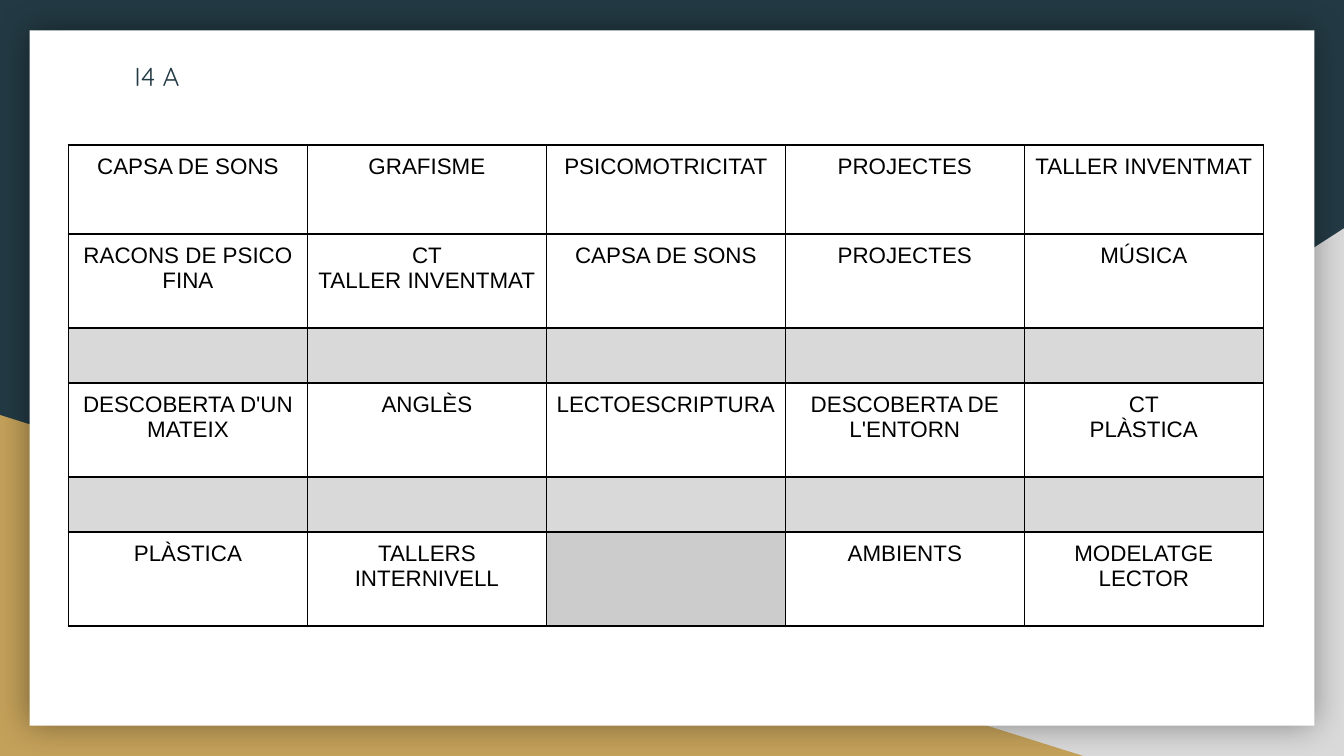
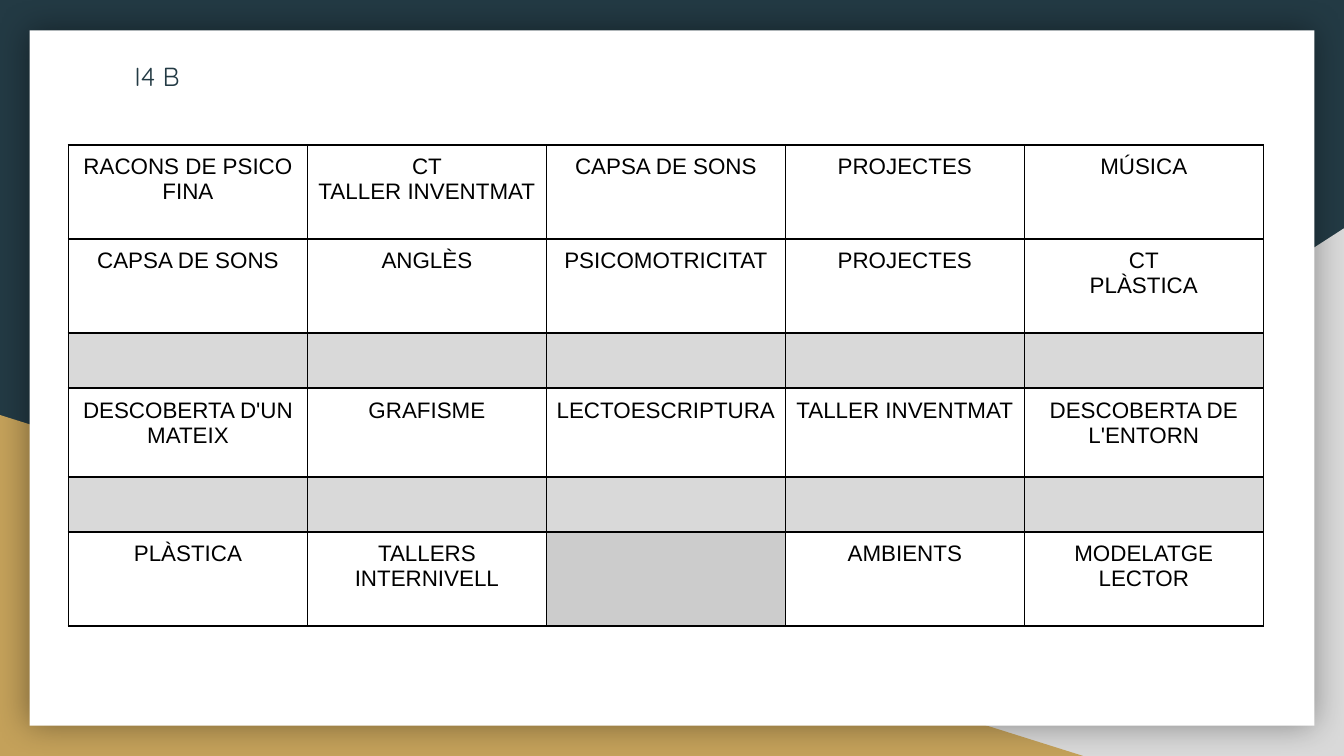
import pptx
import pptx.util
import pptx.dml.color
import pptx.enum.shapes
import pptx.enum.text
import pptx.oxml
import pptx.oxml.ns
from dataclasses import dataclass
from lxml import etree

SHAPE = pptx.enum.shapes.MSO_SHAPE
ALIGN = pptx.enum.text.PP_ALIGN


@dataclass(frozen=True)
class Theme:
    navy: str = "233A44"
    gold: str = "C4A15A"
    grey: str = "D9D9D9"
    blocked: str = "CCCCCC"
    paper: str = "FFFFFF"
    ink: str = "000000"
    title_font: str = "Quicksand"
    body_font: str = "Arial"
    title_size: int = 14
    body_size: int = 12
    border: int = 1
    title_inset: float = 0.1
    cell_inset: float = 0.07


THEME = Theme()
WIDTH = pptx.util.Inches(10)
HEIGHT = pptx.util.Inches(5.625)
COLUMNS = 5
COLUMN = 17.78
TALL, NORMAL, BREAK = 12.44, 11.73, 7.29

BREAK_ROW = [None] * COLUMNS
LAST_ROW = ["PLÀSTICA", "TALLERS INTERNIVELL", None, "AMBIENTS", "MODELATGE LECTOR"]

TIMETABLES = [
    ("I4 A", 18.5, [NORMAL, TALL, BREAK, TALL, BREAK, TALL], [
        ["CAPSA DE SONS", "GRAFISME", "PSICOMOTRICITAT", "PROJECTES", "TALLER INVENTMAT"],
        ["RACONS DE PSICO FINA", "CT\nTALLER INVENTMAT", "CAPSA DE SONS", "PROJECTES", "MÚSICA"],
        BREAK_ROW,
        ["DESCOBERTA D'UN MATEIX", "ANGLÈS", "LECTOESCRIPTURA", "DESCOBERTA DE L'ENTORN", "CT\nPLÀSTICA"],
        BREAK_ROW,
        LAST_ROW,
    ]),
    ("I4 B", 20.6, [TALL, TALL, BREAK, NORMAL, BREAK, TALL], [
        ["RACONS DE PSICO FINA", "CT\nTALLER INVENTMAT", "CAPSA DE SONS", "PROJECTES", "MÚSICA"],
        ["CAPSA DE SONS", "ANGLÈS", "PSICOMOTRICITAT", "PROJECTES", "CT\nPLÀSTICA"],
        BREAK_ROW,
        ["DESCOBERTA D'UN MATEIX", "GRAFISME", "LECTOESCRIPTURA", "TALLER INVENTMAT", "DESCOBERTA DE L'ENTORN"],
        BREAK_ROW,
        LAST_ROW,
    ]),
]


def across(share):
    return round(WIDTH * share / 100)


def down(share):
    return round(HEIGHT * share / 100)


def box(left, top, width, height):
    return across(left), down(top), across(width), down(height)


def rgb(value):
    return pptx.dml.color.RGBColor.from_string(value)


def set_insets(target, inset):
    target.margin_left = target.margin_right = pptx.util.Inches(inset)
    target.margin_top = target.margin_bottom = pptx.util.Inches(inset)


def set_font(p, name, size, color):
    p.font.name = name
    p.font.size = pptx.util.Pt(size)
    p.font.color.rgb = rgb(color)


def add_block(s, kind, place, color):
    sp = s.shapes.add_shape(kind, *box(*place))
    sp.fill.solid()
    sp.fill.fore_color.rgb = rgb(color)
    sp.line.fill.background()
    sp.shadow.inherit = False
    return sp


def add_glow(sp, blur, alpha):
    effects = sp.element.spPr.find(pptx.oxml.ns.qn("a:effectLst"))
    effects.append(pptx.oxml.parse_xml(
        f'<a:outerShdw {pptx.oxml.ns.nsdecls("a")} blurRad="{pptx.util.Pt(blur)}" dist="0" dir="0" '
        f'algn="ctr" rotWithShape="0"><a:srgbClr val="{THEME.ink}">'
        f'<a:alpha val="{alpha * 1000}"/></a:srgbClr></a:outerShdw>'))


def dress_layout(layout, s):
    layout.background.fill.solid()
    layout.background.fill.fore_color.rgb = rgb(THEME.navy)
    right = add_block(s, SHAPE.RIGHT_TRIANGLE, (39.2, 30.2, 60.8, 69.8), THEME.grey)
    right.element.spPr.find(pptx.oxml.ns.qn("a:xfrm")).set("flipH", "1")
    left = add_block(s, SHAPE.RIGHT_TRIANGLE, (0, 54.9, 80.6, 45.1), THEME.gold)
    panel = add_block(s, SHAPE.RECTANGLE, (2.2, 4, 95.6, 92), THEME.paper)
    add_glow(panel, 18, 40)
    for index, sp in enumerate((right, left, panel), start=2):
        layout.shapes.element.insert(index, sp.element)


def set_title(s, text, width):
    title = s.shapes.title
    title.left, title.top, title.width, title.height = box(9, 6.2, width, 7.8)
    tf = title.text_frame
    tf.text = text
    tf.word_wrap = True
    tf.auto_size = pptx.enum.text.MSO_AUTO_SIZE.SHAPE_TO_FIT_TEXT
    tf.vertical_anchor = pptx.enum.text.MSO_ANCHOR.TOP
    set_insets(tf, THEME.title_inset)
    p = tf.paragraphs[0]
    p.alignment = ALIGN.LEFT
    set_font(p, THEME.title_font, THEME.title_size, THEME.navy)


def set_borders(cell):
    tc_pr = cell._tc.get_or_add_tcPr()
    for index, side in enumerate(("lnL", "lnR", "lnT", "lnB")):
        ln = etree.Element(pptx.oxml.ns.qn(f"a:{side}"), w=str(pptx.util.Pt(THEME.border)))
        fill = etree.SubElement(ln, pptx.oxml.ns.qn("a:solidFill"))
        etree.SubElement(fill, pptx.oxml.ns.qn("a:srgbClr"), val=THEME.ink)
        tc_pr.insert(index, ln)


def fill_cell(cell, text, empty_color):
    set_insets(cell, THEME.cell_inset)
    cell.text = text or ""
    if text:
        cell.fill.background()
    else:
        cell.fill.solid()
        cell.fill.fore_color.rgb = rgb(empty_color)
    for p in cell.text_frame.paragraphs:
        p.alignment = ALIGN.CENTER
        set_font(p, THEME.body_font, THEME.body_size, THEME.ink)
    set_borders(cell)


def add_timetable(s, heights, rows):
    place = box(5.1, 19.2, COLUMN * COLUMNS, sum(heights))
    table = s.shapes.add_table(len(rows), COLUMNS, *place).table
    table.first_row = table.horz_banding = False
    for column in table.columns:
        column.width = across(COLUMN)
    for i, (height, texts) in enumerate(zip(heights, rows)):
        table.rows[i].height = down(height)
        empty_color = THEME.blocked if any(texts) else THEME.grey
        for j, text in enumerate(texts):
            fill_cell(table.cell(i, j), text, empty_color)


def main():
    prs = pptx.Presentation()
    prs.slide_width, prs.slide_height = WIDTH, HEIGHT
    layout = prs.slide_layouts.get_by_name("Title Only")
    for number, (title, title_width, heights, rows) in enumerate(TIMETABLES):
        s = prs.slides.add_slide(layout)
        if number == 0:
            dress_layout(layout, s)
        set_title(s, title, title_width)
        add_timetable(s, heights, rows)
    prs.save("out.pptx")


if __name__ == "__main__":
    main()
